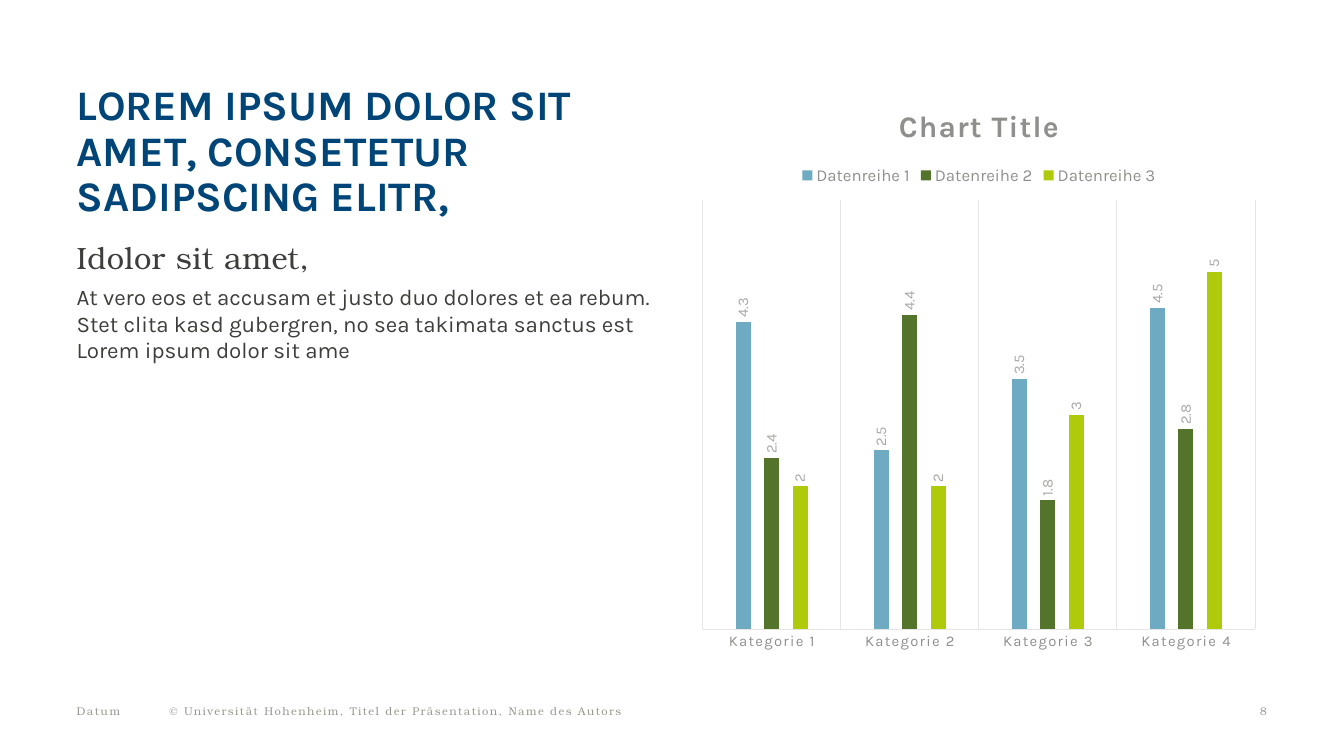
from dataclasses import dataclass

from lxml import etree
from pptx import Presentation
from pptx.chart.data import CategoryChartData
from pptx.dml.color import RGBColor
from pptx.enum.chart import XL_CHART_TYPE, XL_LABEL_POSITION, XL_LEGEND_POSITION, XL_TICK_MARK
from pptx.enum.text import MSO_ANCHOR, MSO_AUTO_SIZE, PP_ALIGN
from pptx.oxml import parse_xml
from pptx.oxml.ns import nsdecls, qn
from pptx.util import Cm, Pt

COLUMNS = XL_CHART_TYPE.COLUMN_CLUSTERED
OUTSIDE = XL_LABEL_POSITION.OUTSIDE_END
LEGEND_TOP = XL_LEGEND_POSITION.TOP
NO_TICK = XL_TICK_MARK.NONE
TOP = MSO_ANCHOR.TOP
NO_FIT = MSO_AUTO_SIZE.NONE
LEFT, RIGHT = PP_ALIGN.LEFT, PP_ALIGN.RIGHT


@dataclass(frozen=True)
class Theme:
    sans: str = "Karla"
    serif: str = "TeX Gyre Bonum"
    navy: str = "004577"
    ink: str = "3E3E3C"
    chart_ink: str = "525250"
    axis_ink: str = "8F8F8D"
    label_ink: str = "A9A9A7"
    footer_ink: str = "989895"
    grid: str = "E5E5E5"
    series: tuple = ("6EAAC1", "55742B", "AFCA0B")
    title: float = 30
    lead: float = 22
    body: float = 16
    chart_title: float = 21.3
    legend: float = 12
    chart_label: float = 10.6
    chart_base: float = 10
    footer: float = 8


class SlideBuilder:
    """Hold the theme and current slide, and add each kind of element."""

    def __init__(self, prs, theme):
        self.theme = theme
        self.s = prs.slides.add_slide(prs.slide_layouts[5])

    def style(self, font, size, color, name=None, bold=False):
        values = {"size": Pt(size), "name": name or self.theme.sans, "bold": bold}
        for key, value in values.items():
            setattr(font, key, value)
        font.color.rgb = RGBColor.from_string(color)

    def frame(self, sp):
        tf = sp.text_frame
        values = {"margin_left": 0, "margin_top": 0, "margin_right": 0, "margin_bottom": 0,
                  "word_wrap": True, "auto_size": NO_FIT, "vertical_anchor": TOP}
        for key, value in values.items():
            setattr(tf, key, value)
        return tf

    def add_text(self, p, text, font, spacing=0, **layout):
        for key, value in layout.items():
            setattr(p, key, value)
        r = p.add_run()
        r.text = text
        self.style(r.font, **font)
        if spacing:
            r._r.get_or_add_rPr().set("spc", str(round(spacing * 100)))

    def title(self, text, box):
        sp = self.s.shapes.title
        sp.left, sp.top, sp.width, sp.height = map(Cm, box)
        t = self.theme
        self.add_text(self.frame(sp).paragraphs[0], text,
                      {"size": t.title, "color": t.navy, "bold": True},
                      alignment=LEFT, line_spacing=0.9)

    def text(self, box):
        return self.frame(self.s.shapes.add_textbox(*map(Cm, box)))

    def body(self, lead, text, box):
        t = self.theme
        tf = self.text(box)
        self.add_text(tf.paragraphs[0], lead,
                      {"size": t.lead, "color": t.ink, "name": t.serif}, 0.3)
        self.add_text(tf.add_paragraph(), text, {"size": t.body, "color": t.ink},
                      space_before=Pt(5), space_after=Pt(5))

    def footer(self, text, left, width, spacing=1, align=LEFT):
        t = self.theme
        tf = self.text((left, 17.75, width, 0.33))
        self.add_text(tf.paragraphs[0], text,
                      {"size": t.footer, "color": t.footer_ink, "name": t.serif},
                      spacing, alignment=align)

    def layout(self, parent, index, **values):
        old = parent.find(qn("c:layout"))
        if old is not None:
            parent.remove(old)
        layout = parse_xml(f"<c:layout {nsdecls('c')}/>")
        manual = etree.SubElement(layout, qn("c:manualLayout"))
        for key, value in values.items():
            etree.SubElement(manual, qn(f"c:{key}")).set("val", str(value))
        parent.insert(index, layout)

    def chart(self, title, categories, rows, box):
        t = self.theme
        data = CategoryChartData()
        data.categories = categories
        for name, values in rows.items():
            data.add_series(name, values)
        chart = self.s.shapes.add_chart(COLUMNS, *map(Cm, box), data).chart
        self.style(chart.font, t.chart_base, t.chart_ink)

        chart.has_title = True
        self.add_text(chart.chart_title.text_frame.paragraphs[0], title,
                      {"size": t.chart_title, "color": t.axis_ink, "bold": True}, 1)
        chart.chart_title.include_in_layout = False
        chart.has_legend = True
        chart.legend.position = LEGEND_TOP
        chart.legend.include_in_layout = False
        self.style(chart.legend.font, t.legend, t.axis_ink)

        value_axis = chart.value_axis
        for key, value in {"minimum_scale": 0, "maximum_scale": 6,
                           "has_major_gridlines": False, "visible": False}.items():
            setattr(value_axis, key, value)
        axis = chart.category_axis
        axis.major_tick_mark = axis.minor_tick_mark = NO_TICK
        axis.has_major_gridlines = True
        for line in (axis.format.line, axis.major_gridlines.format.line):
            line.color.rgb = RGBColor.from_string(t.grid)
            line.width = Pt(0.75)
        self.style(axis.tick_labels.font, t.chart_label, t.axis_ink)
        axis._element.find(".//" + qn("a:defRPr")).set("spc", "100")

        plot = chart.plots[0]
        for key, value in {"gap_width": 444, "overlap": -90, "vary_by_categories": False}.items():
            setattr(plot, key, value)
        for series, color in zip(plot.series, t.series):
            series.format.fill.solid()
            series.format.fill.fore_color.rgb = RGBColor.from_string(color)
            labels = series.data_labels
            labels.show_value = True
            labels.position = OUTSIDE
            self.style(labels.font, t.chart_label, t.label_ink)
            body = labels._element.find(".//" + qn("a:bodyPr"))
            body.set("rot", "-5400000")
            body.set("vert", "horz")
        self.layout(chart._chartSpace.find(".//" + qn("c:plotArea")), 0,
                    layoutTarget="inner", xMode="edge", yMode="edge",
                    x=0.02, y=0.2, w=0.96, h=0.74)


def main():
    prs = Presentation()
    prs.slide_width, prs.slide_height = Cm(33.87), Cm(19.05)
    slide = SlideBuilder(prs, Theme())
    left, right, top, width = 1.93, 17.42, 2.13, 14.5
    slide.title("LOREM IPSUM DOLOR SIT AMET, CONSETETUR SADIPSCING ELITR,",
                (left, top, width, 2.9))
    slide.body("Idolor sit amet,",
               "At vero eos et accusam et justo duo dolores et ea rebum. Stet clita kasd "
               "gubergren, no sea takimata sanctus est Lorem ipsum dolor sit ame",
               (left, 6.02, width, 10.7))
    slide.chart("Chart Title", [f"Kategorie {n}" for n in range(1, 5)],
                {"Datenreihe 1": (4.3, 2.5, 3.5, 4.5),
                 "Datenreihe 2": (2.4, 4.4, 1.8, 2.8),
                 "Datenreihe 3": (2, 2, 3, 5)},
                (right, top, width, 14.6))
    slide.footer("Datum", left, 2.03)
    slide.footer("© Universität Hohenheim, Titel der Präsentation, Name des Autors", 4.27, 25.04)
    slide.footer("8", 29.59, 2.34, 0, RIGHT)
    prs.save("out.pptx")


if __name__ == "__main__":
    main()
